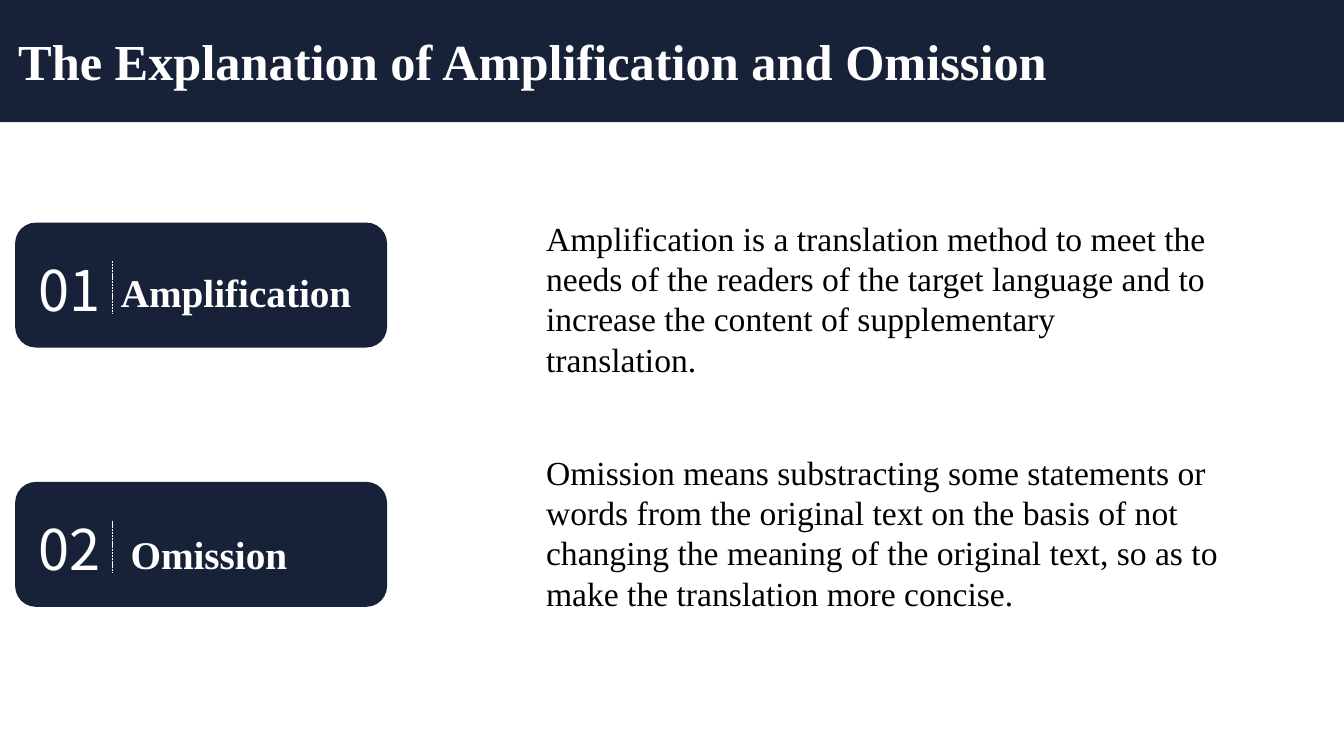
from lxml import etree
from pptx import Presentation
from pptx.dml.color import RGBColor
from pptx.enum import dml, shapes, text
from pptx.oxml.ns import qn
from pptx.util import Pt

NAVY = RGBColor(0x17, 0x22, 0x38)
WHITE = RGBColor(0xFF, 0xFF, 0xFF)
BLACK = RGBColor(0, 0, 0)
SERIF = "Times New Roman"
ROW_PITCH = 185.2

presentation = Presentation()
presentation.slide_width = Pt(960)
presentation.slide_height = Pt(540)
slide = presentation.slides.add_slide(presentation.slide_layouts[5])


def add_panel(kind, left, top, width, height, filled=True):
    shape = slide.shapes.add_shape(kind, Pt(left), Pt(top), Pt(width), Pt(height))
    shape.shadow.inherit = False
    shape.line.fill.background()
    if filled:
        shape.fill.solid()
        shape.fill.fore_color.rgb = NAVY
    else:
        shape.fill.background()
    return shape


def write(shape, words, size, color, font=SERIF, bold=False, anchor=text.MSO_ANCHOR.TOP):
    frame = shape.text_frame
    frame.word_wrap = True
    frame.auto_size = text.MSO_AUTO_SIZE.NONE
    frame.vertical_anchor = anchor
    frame.text = words
    paragraph = frame.paragraphs[0]
    paragraph.alignment = text.PP_ALIGN.LEFT
    paragraph.font.name = font
    paragraph.font.size = Pt(size)
    paragraph.font.bold = bold
    paragraph.font.color.rgb = color
    return paragraph


# Header band with the title in front of it
add_panel(shapes.MSO_SHAPE.RECTANGLE, 0, 0, 960, 87.3)
title = slide.shapes.title
title.left, title.top, title.width, title.height = Pt(5.8), Pt(18), Pt(772), Pt(51)
write(title, "The Explanation of Amplification and Omission", 36, WHITE, bold=True)
slide.shapes._spTree.append(title._element)

# Rows: number, label, label left and top, definition top, width and height, wording
rows = [
    ("01", "Amplification", 79.2, 188.4, 151.9, 488.9, 116.6,
     "Amplification is a translation method to meet the needs of the readers of "
     "the target language and to increase the content of supplementary translation."),
    ("02", "Omission", 86.2, 375.4, 319, 507.6, 145.4,
     "Omission means substracting some statements or words from the original text "
     "on the basis of not changing the meaning of the original text, so as to make "
     "the translation more concise."),
]
for index, (number, label, label_left, label_top, top, width, height, words) in enumerate(rows):
    offset = index * ROW_PITCH

    # Card with number and dashed divider
    add_panel(shapes.MSO_SHAPE.ROUNDED_RECTANGLE, 10.8, 159 + offset, 265.7, 89.3)
    divider = slide.shapes.add_connector(
        shapes.MSO_CONNECTOR.STRAIGHT,
        Pt(80), Pt(186.6 + offset), Pt(80), Pt(223.4 + offset))
    divider.line.color.rgb = WHITE
    divider.line.width = Pt(0.5)
    divider.line.dash_style = dml.MSO_LINE.SQUARE_DOT
    etree.SubElement(divider._element.spPr, qn("a:effectLst"))
    badge = add_panel(shapes.MSO_SHAPE.OVAL, 5.8, 167.2 + offset, 97.9, 78.5, filled=False)
    write(badge, number, 40, WHITE, "Noto Sans CJK SC", anchor=text.MSO_ANCHOR.MIDDLE)

    # Label on the card
    label_box = slide.shapes.add_textbox(Pt(label_left), Pt(label_top), Pt(190), Pt(41))
    write(label_box, label, 28, WHITE, bold=True)

    # Definition
    definition = slide.shapes.add_textbox(Pt(383), Pt(top), Pt(width), Pt(height))
    write(definition, words, 24, BLACK).line_spacing = Pt(28.8)

presentation.save("out.pptx")
